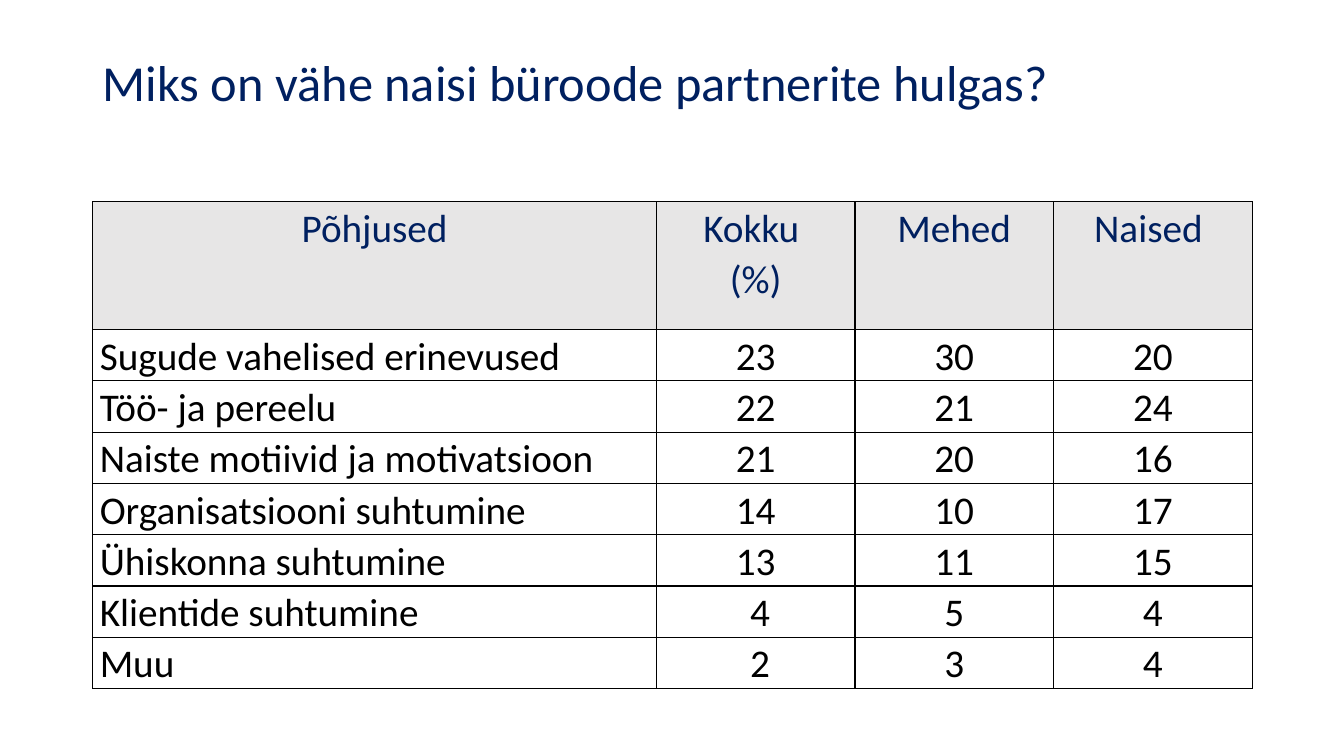
"""Build a slide with a table of reasons why few partners are women."""
from lxml.etree import SubElement
from pptx import Presentation
from pptx.dml.color import RGBColor
from pptx.enum.text import MSO_ANCHOR, PP_ALIGN
from pptx.oxml.ns import qn
from pptx.util import Inches, Pt

NAVY = RGBColor(0x00, 0x20, 0x60)
BLACK = RGBColor(0x00, 0x00, 0x00)
GREY = RGBColor(0xE7, 0xE6, 0xE6)
FONT = "Calibri"

REASONS = [
    ("Põhjused", "Kokku \n(%)", "Mehed", "Naised "),
    ("Sugude vahelised erinevused", "23", "30", "20"),
    ("Töö- ja pereelu", "22", "21", "24"),
    ("Naiste motiivid ja motivatsioon", "21", "20", "16"),
    ("Organisatsiooni suhtumine", "14", "10", "17"),
    ("Ühiskonna suhtumine", "13", "11", "15"),
    ("Klientide suhtumine", " 4", "5", "4"),
    ("Muu", " 2", "3", "4"),
]
COLUMN_WIDTHS = [5.59, 1.97, 1.97, 1.97]
HEADER_HEIGHT, ROW_HEIGHT = 1.27, 0.5


def add_run(paragraph, text, size, color):
    run = paragraph.add_run()
    run.text = text
    run.font.name = FONT
    run.font.size = Pt(size)
    run.font.bold = False
    run.font.color.rgb = color


def add_borders(cell):
    properties = cell._tc.get_or_add_tcPr()
    for side in ("a:lnL", "a:lnR", "a:lnT", "a:lnB"):
        border = SubElement(properties, qn(side), w=str(Pt(1)))
        border_fill = SubElement(border, qn("a:solidFill"))
        SubElement(border_fill, qn("a:srgbClr"), val=str(BLACK))


prs = Presentation()
prs.slide_width, prs.slide_height = Inches(13.33), Inches(7.5)
slide = prs.slides.add_slide(prs.slide_layouts[5])

title = slide.shapes.title
title.left, title.top = Inches(0.92), Inches(0.4)
title.width, title.height = Inches(11.5), Inches(1.45)
title.text_frame.vertical_anchor = MSO_ANCHOR.MIDDLE
title.text_frame.margin_bottom = Inches(0.6)
question = title.text_frame.paragraphs[0]
question.alignment = PP_ALIGN.LEFT
question.line_spacing = 0.9
add_run(question, "Miks on vähe naisi büroode partnerite hulgas?", 36, NAVY)

table_height = HEADER_HEIGHT + ROW_HEIGHT * (len(REASONS) - 1)
reasons_table = slide.shapes.add_table(
    len(REASONS), len(COLUMN_WIDTHS),
    Inches(0.92), Inches(2), Inches(11.5), Inches(table_height)).table
reasons_table.horz_banding = False
for column, width in zip(reasons_table.columns, COLUMN_WIDTHS):
    column.width = Inches(width)

for row_index, reason in enumerate(REASONS):
    is_header = row_index == 0
    row_height = HEADER_HEIGHT if is_header else ROW_HEIGHT
    reasons_table.rows[row_index].height = Inches(row_height)
    for column_index, text in enumerate(reason):
        cell = reasons_table.cell(row_index, column_index)
        cell.margin_left = cell.margin_right = Inches(0.07)
        cell.margin_top = cell.margin_bottom = 0
        add_borders(cell)
        if is_header:
            cell.fill.solid()
            cell.fill.fore_color.rgb = GREY
        else:
            cell.fill.background()
        is_label = column_index == 0 and not is_header
        for line_index, line in enumerate(text.split("\n")):
            frame = cell.text_frame
            paragraph = frame.add_paragraph() if line_index else frame.paragraphs[0]
            paragraph.alignment = PP_ALIGN.LEFT if is_label else PP_ALIGN.CENTER
            paragraph.line_spacing = 1.07
            add_run(paragraph, line, 28, NAVY if is_header else BLACK)

prs.save("out.pptx")
